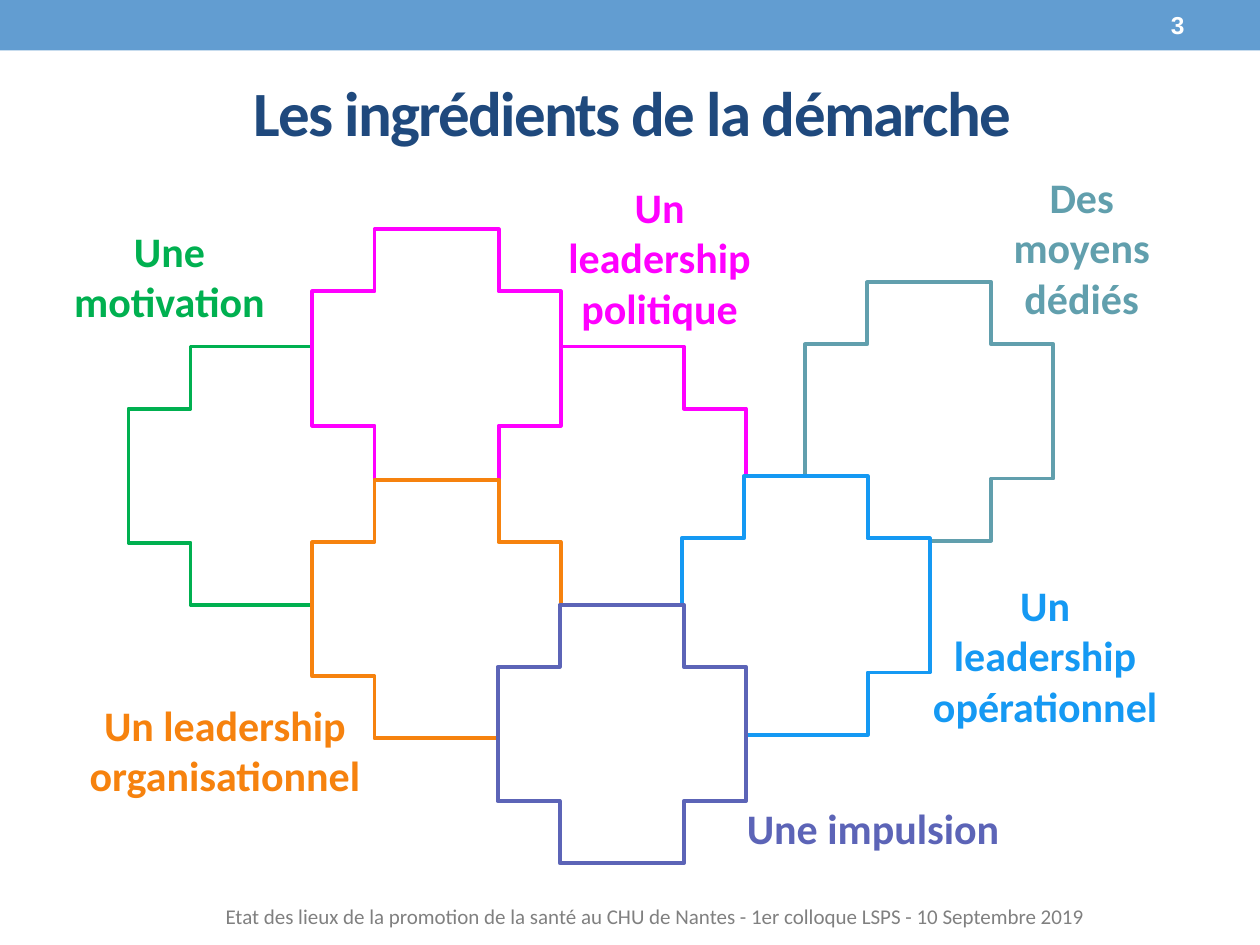
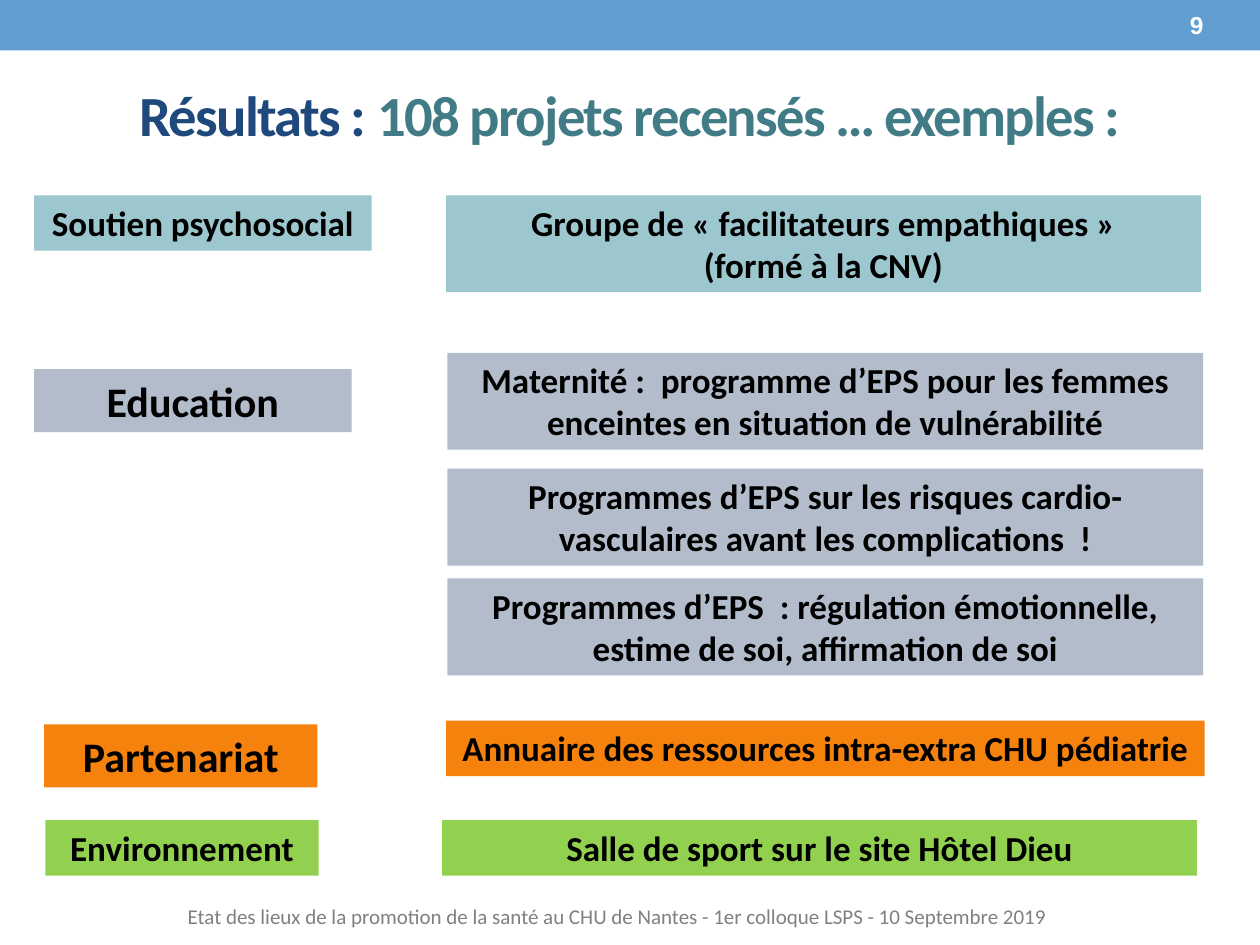
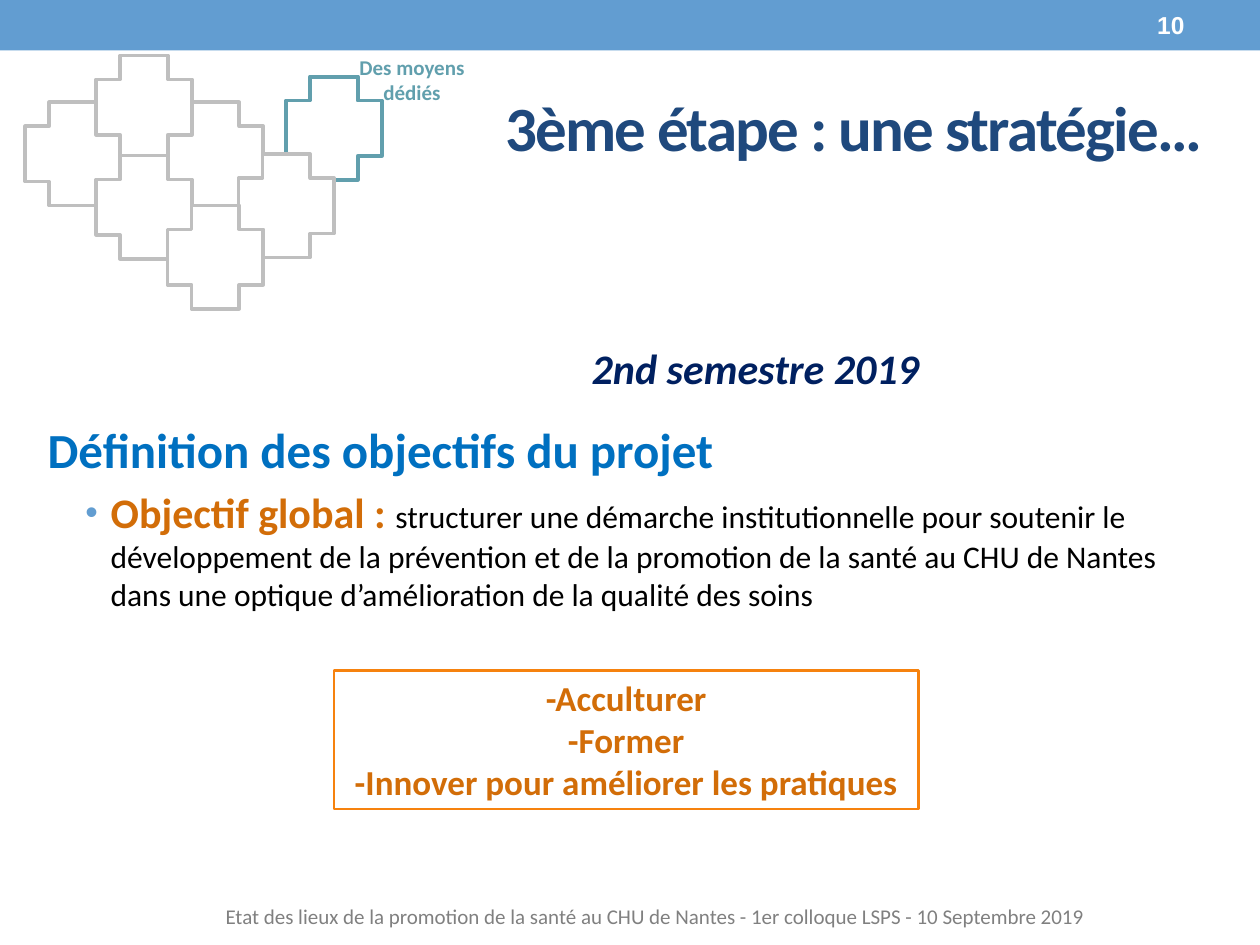
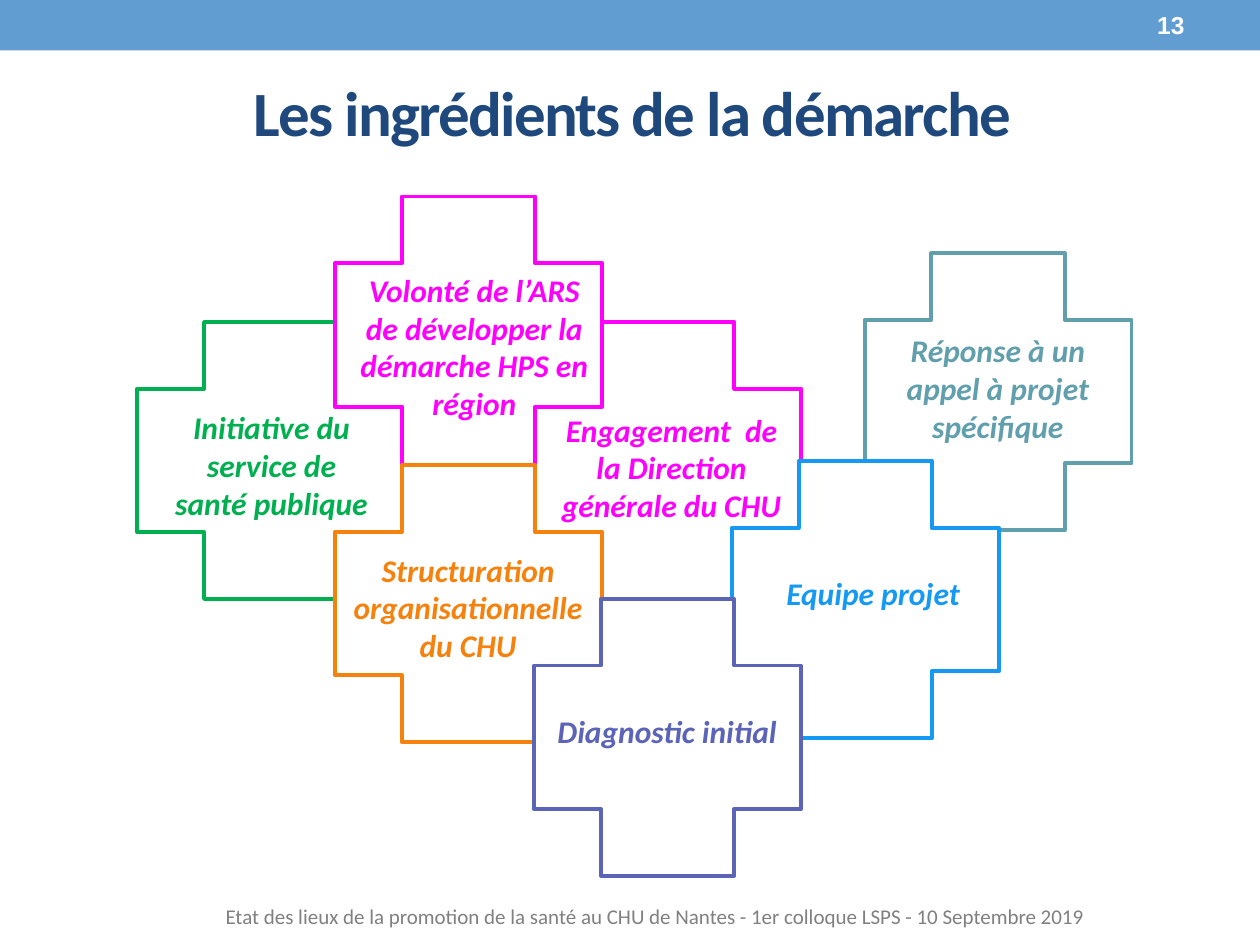
from dataclasses import dataclass
from typing import NamedTuple

from lxml import etree
from pptx import Presentation
from pptx.dml.color import RGBColor
from pptx.enum.shapes import MSO_SHAPE
from pptx.enum.text import MSO_ANCHOR, MSO_AUTO_SIZE, PP_ALIGN
from pptx.oxml.ns import qn
from pptx.util import Inches, Pt

RECT, CROSS = MSO_SHAPE.RECTANGLE, MSO_SHAPE.CROSS
LEFT, CENTER, RIGHT = PP_ALIGN.LEFT, PP_ALIGN.CENTER, PP_ALIGN.RIGHT
TOP, MIDDLE = MSO_ANCHOR.TOP, MSO_ANCHOR.MIDDLE
NO_AUTOFIT = MSO_AUTO_SIZE.NONE
TITLE_ONLY = 5


@dataclass(frozen=True)
class Theme:
    font: str = "Calibri"
    number_font: str = "Arial"
    band: str = "629DD1"
    title: str = "1F497D"
    title_accent: str = "417B85"
    white: str = "FFFFFF"
    black: str = "000000"
    footer: str = "808080"
    faded: str = "BFBFBF"
    green: str = "00B050"
    magenta: str = "FF00FF"
    orange: str = "F6820E"
    teal: str = "619FAD"
    azure: str = "1599F3"
    violet: str = "5C64B7"
    pale_teal: str = "9CC7CE"
    pale_slate: str = "B2BCCB"
    lime: str = "92D050"
    navy: str = "002060"
    blue: str = "0070C0"
    rust: str = "D26D08"
    title_size: float = 36
    long_title_size: float = 32.4
    heading_size: float = 28
    label_size: float = 24
    box_size: float = 20
    body_size: float = 18
    number_size: float = 14
    small_size: float = 12
    outline: float = 2.25
    faded_outline: float = 2.08


THEME = Theme()


class Box(NamedTuple):
    left: float
    top: float
    width: float
    height: float

    def inner(self, left, top, width, height):
        """Box whose offset is measured from this box."""
        return Box(self.left + left, self.top + top, width, height)

    def emu(self):
        return [Inches(length) for length in self]


BAND = Box(0, 0, 10, 0.4)
TITLE = Box(0.52, 0.42, 9, 0.93)
NUMBER = Box(8.33, 0.02, 1.17, 0.36)
FOOTER = Box(0.83, 7.09, 8.74, 0.36)
FOOTER_TEXT = ("Etat des lieux de la promotion de la santé au CHU de Nantes"
               " - 1er colloque LSPS - 10 Septembre 2019")

# Offsets of the crosses, back to front, in a cluster of the reference size
CLUSTER_WIDTH, CLUSTER_HEIGHT = 7.34, 5.03
CROSS_WIDTH, CROSS_HEIGHT = 1.97, 2.05
CROSSES = [
    (0, 0.93, THEME.green),
    (2.93, 0.93, THEME.magenta),
    (1.46, 0, THEME.magenta),
    (1.46, 1.99, THEME.orange),
    (5.37, 0.42, THEME.teal),
    (4.39, 1.96, THEME.azure),
    (2.93, 2.98, THEME.violet),
]

INGREDIENTS = [
    ("Une motivation", THEME.green, (-0.55, -0.08, 1.75, 0.91)),
    ("Un leadership politique", THEME.magenta, (3.34, -0.43, 1.75, 1.31)),
    ("Un leadership organisationnel", THEME.orange, (-0.48, 3.68, 2.49, 0.91)),
    ("Des moyens dédiés", THEME.teal, (6.7, -0.51, 1.73, 1.31)),
    ("Un leadership opérationnel", THEME.azure, (6.26, 2.73, 2.03, 1.31)),
    ("Une impulsion", THEME.violet, (4.74, 4.5, 2.34, 0.5)),
]

ACHIEVEMENTS = [
    ("Initiative du service de santé publique", THEME.green,
     (0.16, 1.63, 1.81, 1.01)),
    ("Volonté de l’ARS de développer la démarche HPS en région", THEME.magenta,
     (1.64, 0.54, 2.07, 1.31)),
    ("Engagement  de la Direction générale du CHU", THEME.magenta,
     (3.22, 1.65, 2.04, 1.01)),
    ("Structuration organisationnelle du CHU", THEME.orange,
     (1.57, 2.76, 2.11, 1.01)),
    ("Réponse à un appel à projet spécifique", THEME.teal,
     (5.88, 1.02, 1.9, 1.01)),
    ("Equipe projet", THEME.azure, (4.82, 2.95, 2.04, 0.4)),
    ("Diagnostic initial", THEME.violet, (3.06, 4.04, 2.29, 0.4)),
]

# Fill, category, its size and place, then the example projects
PROJECTS = [
    (THEME.pale_teal, "Soutien psychosocial", THEME.box_size, (0, 0, 2.68, 0.44),
     [(["Groupe de « facilitateurs empathiques »", "(formé à la CNV)"],
       (3.27, 0, 5.99, 0.77))]),
    (THEME.pale_slate, "Education", THEME.label_size, (0, 1.38, 2.52, 0.5),
     [(["Maternité :  programme d’EPS pour les femmes enceintes en situation "
        "de vulnérabilité"], (3.28, 1.25, 6, 0.77)),
      (["Programmes d’EPS sur les risques cardio-vasculaires avant les "
        "complications  !"], (3.28, 2.17, 6, 0.77)),
      (["Programmes d’EPS  : régulation émotionnelle, estime de soi, "
        "affirmation de soi"], (3.28, 3.04, 6, 0.77))]),
    (THEME.orange, "Partenariat", THEME.label_size, (0.08, 4.2, 2.17, 0.5),
     [(["Annuaire des ressources intra-extra CHU pédiatrie"],
       (3.27, 4.17, 6.02, 0.44))]),
    (THEME.lime, "Environnement", THEME.box_size, (0.09, 4.96, 2.17, 0.44),
     [(["Salle de sport sur le site Hôtel Dieu"], (3.24, 4.96, 5.99, 0.44))]),
]


def rgb(color):
    return RGBColor.from_string(color)


def add_run(paragraph, text, size, color, bold=True, italic=False,
            font=THEME.font):
    run = paragraph.add_run()
    run.text = text
    run.font.name = font
    run.font.size = Pt(size)
    run.font.bold = bold
    run.font.italic = italic
    run.font.color.rgb = rgb(color)
    return run


def prepare_frame(shape, anchor=TOP):
    frame = shape.text_frame
    frame.word_wrap = True
    frame.auto_size = NO_AUTOFIT
    frame.vertical_anchor = anchor
    return frame


def write_lines(frame, lines, size, color, align=CENTER, **style):
    for index, line in enumerate(lines):
        paragraph = frame.add_paragraph() if index else frame.paragraphs[0]
        paragraph.alignment = align
        add_run(paragraph, line, size, color, **style)


def add_label(slide, box, text, size, color, align=CENTER, anchor=TOP, **style):
    frame = prepare_frame(slide.shapes.add_textbox(*box.emu()), anchor)
    write_lines(frame, [text], size, color, align, **style)


def add_panel(slide, box, preset=RECT, fill=None, line=None,
              line_width=THEME.outline):
    panel = slide.shapes.add_shape(preset, *box.emu())
    panel.shadow.inherit = False
    if fill:
        panel.fill.solid()
        panel.fill.fore_color.rgb = rgb(fill)
    else:
        panel.fill.background()
    if line:
        panel.line.color.rgb = rgb(line)
        panel.line.width = Pt(line_width)
    else:
        panel.line.fill.background()
    return panel


def add_band_to_master(prs, slide):
    """Draw the top band, then move it behind everything on the master."""
    band = add_panel(slide, BAND, fill=THEME.band).element
    band.find(".//" + qn("p:cNvPr")).set("id", "100")
    master_tree = prs.slide_master.shapes[0].element.getparent()
    master_tree.insert(2, band)


def start_slide(prs, number, title_runs, title_box=TITLE,
                title_size=THEME.title_size, number_box=NUMBER,
                footer_box=FOOTER):
    slide = prs.slides.add_slide(prs.slide_layouts[TITLE_ONLY])
    title = slide.shapes.title
    title.left, title.top, title.width, title.height = title_box.emu()
    paragraph = prepare_frame(title, MIDDLE).paragraphs[0]
    paragraph.alignment = CENTER
    for text, color in title_runs:
        run = add_run(paragraph, text, title_size, color)
        run.font._element.set("spc", "-100")
    add_label(slide, number_box, str(number), THEME.number_size, THEME.white,
              RIGHT, MIDDLE, font=THEME.number_font)
    add_label(slide, footer_box, FOOTER_TEXT, THEME.small_size, THEME.footer,
              anchor=MIDDLE, bold=False)
    return slide


def add_cross_cluster(slide, box, highlight=None):
    """Scale the crosses to the box; with a highlight, fade the other colours."""
    across = box.width / CLUSTER_WIDTH
    down = box.height / CLUSTER_HEIGHT
    for left, top, color in CROSSES:
        faded = highlight is not None and color != highlight
        cross_box = box.inner(left * across, top * down,
                              CROSS_WIDTH * across, CROSS_HEIGHT * down)
        add_panel(slide, cross_box, CROSS, THEME.white,
                  THEME.faded if faded else color,
                  THEME.faded_outline if faded else THEME.outline)


def add_ingredients_slide(prs, number, box, labels, size, italic=False):
    slide = start_slide(prs, number,
                        [("Les ingrédients de la démarche", THEME.title)])
    add_cross_cluster(slide, box)
    for text, color, place in labels:
        add_label(slide, box.inner(*place), text, size, color, italic=italic)
    return slide


def add_project_grid(slide, box):
    for fill, category, category_size, category_place, examples in PROJECTS:
        entries = [([category], category_place, category_size)]
        entries += [(lines, place, THEME.box_size) for lines, place in examples]
        for lines, place, size in entries:
            panel = add_panel(slide, box.inner(*place), fill=fill)
            write_lines(prepare_frame(panel), lines, size, THEME.black)


def add_results_slide(prs):
    slide = start_slide(
        prs, 9,
        [("Résultats : ", THEME.title),
         ("108 projets recensés … exemples :", THEME.title_accent)],
        Box(0.5, 0.58, 9, 0.65), THEME.long_title_size,
        number_box=Box(8.48, 0.02, 1.17, 0.36),
        footer_box=Box(0.53, 7.09, 8.74, 0.36))
    add_project_grid(slide, Box(0.27, 1.55, 9.29, 5.4))


def set_indent(paragraph, left, first=0):
    properties = paragraph._p.get_or_add_pPr()
    properties.set("marL", str(Inches(left)))
    properties.set("indent", str(Inches(first)))
    return properties


def set_bullet(paragraph, left, first, color):
    properties = set_indent(paragraph, left, first)
    bullet_color = etree.SubElement(properties, qn("a:buClr"))
    etree.SubElement(bullet_color, qn("a:srgbClr"), val=color)
    etree.SubElement(properties, qn("a:buSzPct"), val="85000")
    etree.SubElement(properties, qn("a:buFont"), typeface="Arial")
    etree.SubElement(properties, qn("a:buChar"), char="•")


def add_objectives(slide, box):
    frame = prepare_frame(slide.shapes.add_textbox(*box.emu()))
    period = frame.paragraphs[0]
    period.alignment = CENTER
    set_indent(period, 2)
    add_run(period, "2nd semestre 2019", THEME.label_size, THEME.navy,
            italic=True)

    heading = frame.add_paragraph()
    heading.alignment = LEFT
    heading.space_before = Pt(15)
    add_run(heading, "Définition des objectifs du projet",
            THEME.heading_size, THEME.blue)

    objective = frame.add_paragraph()
    objective.alignment = LEFT
    objective.space_before = Pt(5)
    set_bullet(objective, 0.5, -0.2, THEME.band)
    add_run(objective, "Objectif global : ", THEME.label_size, THEME.rust)
    add_run(objective,
            "structurer une démarche institutionnelle pour soutenir le "
            "développement de la prévention et de la promotion de la santé au "
            "CHU de Nantes dans une optique d’amélioration de la qualité des "
            "soins", THEME.body_size, THEME.black, bold=False)


def add_strategy_slide(prs):
    slide = start_slide(prs, 10, [("3ème étape : une stratégie…", THEME.title)],
                        Box(3.77, 0.58, 6.01, 0.84))
    cluster = Box(0.2, 0.44, 2.83, 2.01)
    add_cross_cluster(slide, cluster, highlight=THEME.teal)
    add_label(slide, cluster.inner(2.52, -0.06, 1.1, 0.5), "Des moyens dédiés",
              THEME.small_size, THEME.teal)
    add_objectives(slide, Box(0.28, 2.67, 9.43, 2.5))
    actions = add_panel(slide, Box(2.65, 5.32, 4.64, 1.1),
                        line=THEME.orange, line_width=1.5)
    write_lines(prepare_frame(actions),
                ["-Acculturer", "-Former",
                 "-Innover pour améliorer les pratiques"],
                THEME.box_size, THEME.rust)


def main():
    prs = Presentation()
    prs.slide_width, prs.slide_height = Inches(10), Inches(7.5)
    opening = add_ingredients_slide(prs, 3, Box(1.02, 1.82, 7.34, 5.03),
                                    INGREDIENTS, THEME.label_size)
    add_band_to_master(prs, opening)
    add_results_slide(prs)
    add_strategy_slide(prs)
    add_ingredients_slide(prs, 13, Box(1.09, 1.56, 7.89, 5.39),
                          ACHIEVEMENTS, THEME.body_size, italic=True)
    prs.save("out.pptx")


if __name__ == "__main__":
    main()
